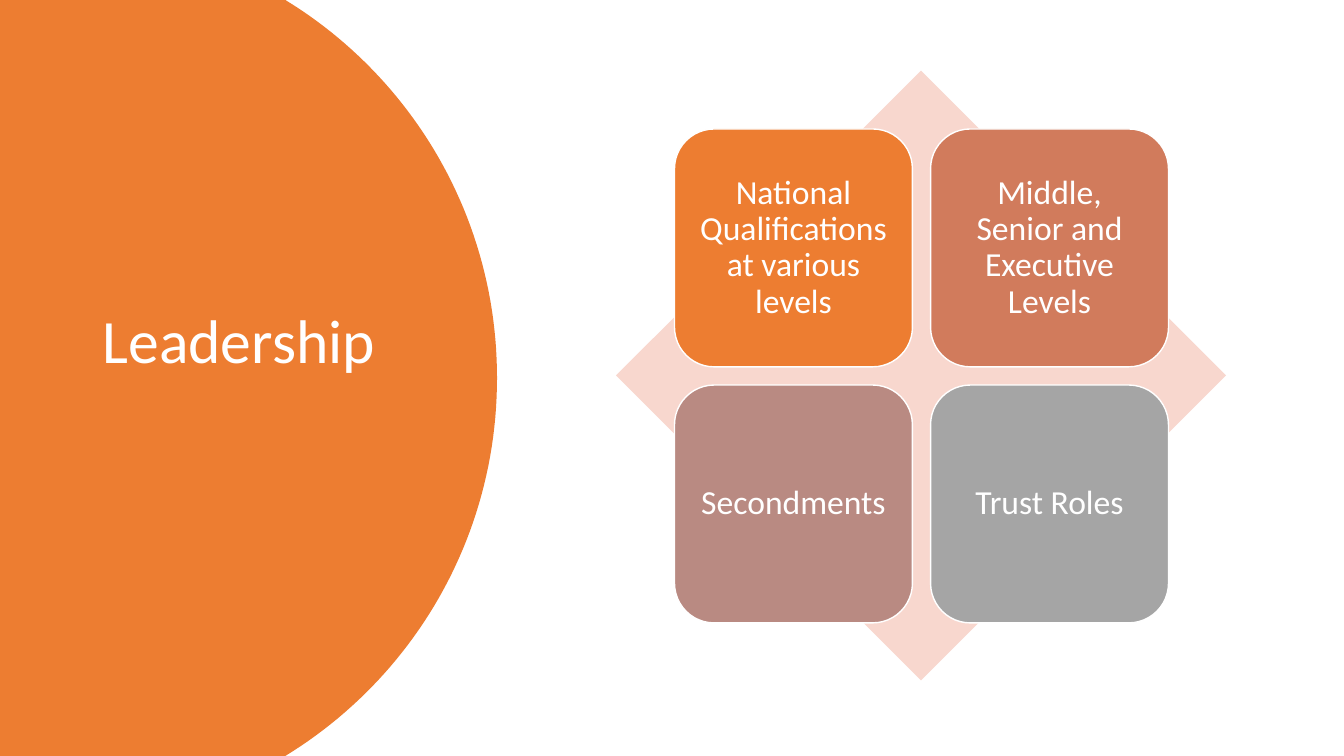
from dataclasses import dataclass

from pptx import Presentation
from pptx.dml.color import RGBColor
from pptx.enum.shapes import MSO_SHAPE as Preset
from pptx.enum.text import MSO_ANCHOR as Anchor, PP_ALIGN as Align
from pptx.util import Emu, Pt

EMU_PER_PX = 9144  # 100 px to the inch


def px(length):
    return Emu(round(length * EMU_PER_PX))


@dataclass(frozen=True)
class Theme:
    font: str = "Calibri"
    title_size: int = 44
    card_size: int = 24
    line_width: int = 1
    white: str = "FFFFFF"
    accent: str = "ED7D31"
    backdrop: str = "F8D7CE"
    cards: tuple = ("ED7D31", "D17B5C", "B98A82", "A5A5A5")


class SlideBuilder:
    def __init__(self, slide, theme):
        self.slide = slide
        self.theme = theme

    def paint(self, shape, fill, line=None):
        shape.shadow.inherit = False
        shape.fill.solid()
        shape.fill.fore_color.rgb = RGBColor.from_string(fill)
        if line:
            shape.line.color.rgb = RGBColor.from_string(line)
            shape.line.width = Pt(self.theme.line_width)
        else:
            shape.line.fill.background()

    def outline(self, points, fill):
        start, *rest = [(px(x), px(y)) for x, y in points]
        builder = self.slide.shapes.build_freeform(*start)
        builder.add_line_segments(rest, close=True)
        self.paint(builder.convert_to_shape(), fill)

    def preset(self, kind, box, fill, line=None):
        shape = self.slide.shapes.add_shape(kind, *map(px, box))
        self.paint(shape, fill, line)
        return shape

    def set_text(self, shape, text, size, align, insets):
        frame = shape.text_frame
        left, top, right, bottom = map(px, insets)
        frame_format = {
            "word_wrap": True, "vertical_anchor": Anchor.MIDDLE,
            "margin_left": left, "margin_top": top,
            "margin_right": right, "margin_bottom": bottom,
        }
        for name, value in frame_format.items():
            setattr(frame, name, value)
        paragraph = frame.paragraphs[0]
        paragraph.text = text
        for name, value in {"alignment": align, "line_spacing": 0.9}.items():
            setattr(paragraph, name, value)
        font = paragraph.runs[0].font
        for name, value in {"name": self.theme.font, "size": Pt(size)}.items():
            setattr(font, name, value)
        font.color.rgb = RGBColor.from_string(self.theme.white)

    def title(self, text, box, insets):
        shape = self.slide.shapes.add_textbox(*map(px, box))
        self.set_text(shape, text, self.theme.title_size, Align.LEFT, insets)

    def card(self, text, box, fill):
        shape = self.preset(Preset.ROUNDED_RECTANGLE, box, fill, self.theme.white)
        self.set_text(shape, text, self.theme.card_size, Align.CENTER, (10, 10, 10, 10))


def bezier(controls, steps):
    """Points along a cubic curve, both ends included."""
    for step in range(steps + 1):
        t = step / steps
        weights = ((1 - t) ** 3, 3 * t * (1 - t) ** 2, 3 * t * t * (1 - t), t ** 3)
        yield tuple(sum(w * c for w, c in zip(weights, axis)) for axis in zip(*controls))


def main():
    width, height = 1333, 750
    theme = Theme()
    presentation = Presentation()
    presentation.slide_width, presentation.slide_height = px(width), px(height)
    slide = presentation.slides.add_slide(presentation.slide_layouts[6])
    builder = SlideBuilder(slide, theme)

    # Rounded panel, its lower half mirroring the upper
    upper = list(bezier([(283, 0), (409, 77), (493, 216), (493, 375)], 48))
    lower = [(x, height - y) for x, y in reversed(upper[:-1])]
    builder.outline([(0, 0), *upper, *lower, (0, height)], theme.accent)

    # Title, raised by a deep bottom inset
    builder.title("Leadership", (92, 70, 323, 609), (10, 5, 10, 72))

    # Diamond behind the cards
    builder.preset(Preset.DIAMOND, (611, 70, 605, 605), theme.backdrop)

    # Two by two grid of cards
    left, top, side, pitch = 669, 128, 236, 254
    labels = (
        "National Qualifications at various levels",
        "Middle, Senior and Executive Levels",
        "Secondments",
        "Trust Roles",
    )
    for index, (label, fill) in enumerate(zip(labels, theme.cards)):
        row, column = divmod(index, 2)
        box = (left + column * pitch, top + row * pitch, side, side)
        builder.card(label, box, fill)

    presentation.save("out.pptx")


if __name__ == "__main__":
    main()
